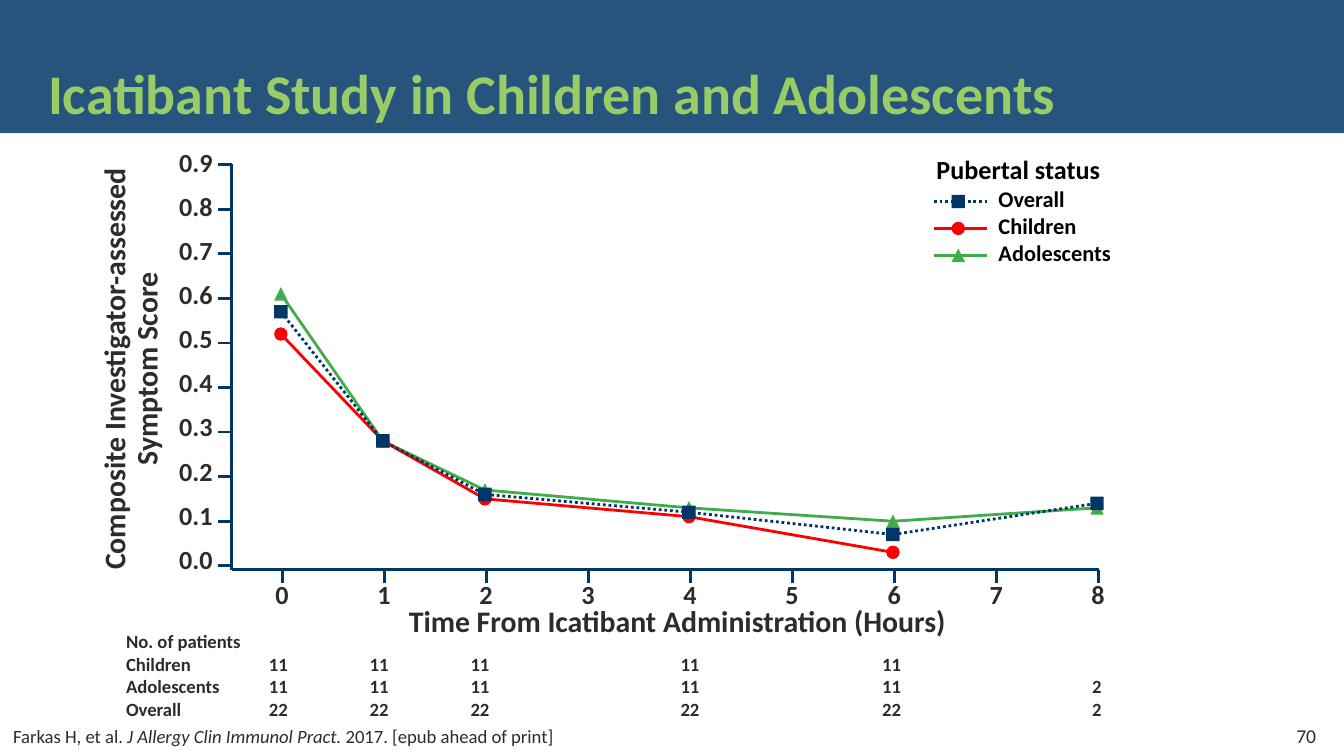
from dataclasses import dataclass

from lxml import etree
from pptx import Presentation
from pptx.dml.color import RGBColor
from pptx.enum import dml, shapes, text
from pptx.oxml import ns
from pptx.util import Pt


@dataclass(frozen=True)
class Theme:
    font: str = "Calibri"
    navy: str = "003767"
    title: str = "99CC67"
    ink: str = "2C2C2C"
    black: str = "000000"
    red: str = "FF0000"
    green: str = "41AD49"
    title_size: float = 30
    axis_title_size: float = 16
    tick_size: float = 14
    legend_size: float = 12
    small_size: float = 10
    number_size: float = 10.5
    line_width: float = 1.5


THEME = Theme()
MARKER = shapes.MSO_SHAPE
ALIGN = text.PP_ALIGN
ANCHOR = text.MSO_ANCHOR

TITLE = "Icatibant Study in Children and Adolescents"
CITATION = [("Farkas H, et al. ", False),
            ("J Allergy Clin Immunol Pract.", True),
            (" 2017. [epub ahead of print]", False)]
SLIDE_NUMBER = "70"
Y_TITLE = ["Composite Investigator-assessed", "Symptom Score"]
X_TITLE = "Time From Icatibant Administration (Hours)"
LEGEND_TITLE = "Pubertal status"
SCORE_TICKS = [tenth / 10 for tenth in range(10)]
HOUR_TICKS = range(9)
HOURS = [0, 1, 2, 4, 6, 8]
# name: (scores at HOURS, colour, marker, dotted line)
SERIES = {
    "Adolescents": ([0.61, 0.28, 0.17, 0.13, 0.1, 0.13], THEME.green, MARKER.ISOSCELES_TRIANGLE, False),
    "Children": ([0.52, 0.28, 0.15, 0.11, 0.03], THEME.red, MARKER.OVAL, False),
    "Overall": ([0.57, 0.28, 0.16, 0.12, 0.07, 0.14], THEME.navy, MARKER.RECTANGLE, True),
}
LEGEND = ["Overall", "Children", "Adolescents"]
PATIENTS = ["No. of patients",
            "Children\t11\t11\t11\t11\t11",
            "Adolescents\t11\t11\t11\t11\t11\t2",
            "Overall\t22\t22\t22\t22\t22\t2"]
PATIENT_TABS = [76.5, 130.5, 184.5, 297, 405, 517.5]

# Plot geometry in points
AXIS_X, AXIS_Y, AXIS_TOP, AXIS_RIGHT = 124.2, 305.3, 88, 588.8
ZERO_HOUR, HOUR_STEP = 151.2, 54.65
ZERO_SCORE, SCORE_STEP = 303.1, 238.7
TICK, MARKER_SIZE, INSET = 7.2, 7.2, 7.2
X_LABELS_LEFT = 108


def hour_x(hour):
    return ZERO_HOUR + HOUR_STEP * hour


def score_y(score):
    return ZERO_SCORE - SCORE_STEP * score


def color(value):
    return RGBColor.from_string(value)


def add_text(slide, box, lines, size, ink=THEME.ink, bold=True, align=ALIGN.LEFT,
             anchor=ANCHOR.TOP, wrap=True, spacing=None, after=None, tabs=(), tab_align="l"):
    """Add a box of paragraphs; a line is a string or a list of (text, italic) runs."""
    shape = slide.shapes.add_textbox(*map(Pt, box))
    frame = shape.text_frame
    frame.word_wrap = wrap
    frame.vertical_anchor = anchor
    for index, line in enumerate(lines):
        paragraph = frame.add_paragraph() if index else frame.paragraphs[0]
        for content, italic in [(line, None)] if isinstance(line, str) else line:
            run = paragraph.add_run()
            run.text = content
            run.font.italic = italic
        paragraph.alignment = align
        if spacing:
            paragraph.line_spacing = spacing
        if after:
            paragraph.space_after = Pt(after)
        if tabs:
            tab_list = etree.SubElement(paragraph._p.get_or_add_pPr(), ns.qn("a:tabLst"))
            for tab in tabs:
                etree.SubElement(tab_list, ns.qn("a:tab"), pos=str(Pt(tab)), algn=tab_align)
        font = paragraph.font
        font.name, font.size, font.bold = THEME.font, Pt(size), bold
        font.color.rgb = color(ink)
    return shape


def style_line(shape, ink, dotted=False):
    shape.line.color.rgb = color(ink)
    shape.line.width = Pt(THEME.line_width)
    if dotted:
        shape.line.dash_style = dml.MSO_LINE.ROUND_DOT


def add_line(slide, x1, y1, x2, y2, ink=THEME.navy, dotted=False):
    line = slide.shapes.add_connector(shapes.MSO_CONNECTOR.STRAIGHT, *map(Pt, (x1, y1, x2, y2)))
    style_line(line, ink, dotted)
    etree.SubElement(line._element.spPr, ns.qn("a:effectLst"))


def add_filled(slide, kind, box, fill):
    shape = slide.shapes.add_shape(kind, *map(Pt, box))
    shape.shadow.inherit = False
    shape.fill.solid()
    shape.fill.fore_color.rgb = color(fill)
    shape.line.fill.background()
    return shape


def add_marker(slide, kind, x, y, fill):
    half = MARKER_SIZE / 2
    add_filled(slide, kind, (x - half, y - half, MARKER_SIZE, MARKER_SIZE), fill)


def add_header(slide):
    band = add_filled(slide, MARKER.RECTANGLE, (0, 0, 720, 71.3), THEME.navy)
    band_color = band._element.spPr.find(".//" + ns.qn("a:srgbClr"))
    etree.SubElement(band_color, ns.qn("a:alpha"), val="85000")
    title = add_text(slide, (18.7, 18, 643.7, 53.3), [TITLE], THEME.title_size,
                     THEME.title, anchor=ANCHOR.BOTTOM, spacing=0.9)
    properties = title.text_frame.paragraphs[0].runs[0].font._element
    effects = etree.SubElement(properties, ns.qn("a:effectLst"))
    shadow = etree.SubElement(effects, ns.qn("a:outerShdw"), blurRad=str(Pt(3)),
                              dist=str(Pt(3)), dir="2700000", algn="tl")
    shade = etree.SubElement(shadow, ns.qn("a:srgbClr"), val=THEME.black)
    etree.SubElement(shade, ns.qn("a:alpha"), val="43000")


def add_axes(slide):
    add_line(slide, AXIS_X, AXIS_TOP, AXIS_X, AXIS_Y)
    add_line(slide, AXIS_X, AXIS_Y, AXIS_RIGHT, AXIS_Y)
    for score in SCORE_TICKS:
        add_line(slide, AXIS_X - TICK, score_y(score), AXIS_X, score_y(score))
    for hour in HOUR_TICKS:
        add_line(slide, hour_x(hour), AXIS_Y, hour_x(hour), AXIS_Y + TICK)
    y_title = add_text(slide, (-46.1, 176.4, 232.6, 42.5), Y_TITLE, THEME.axis_title_size,
                       align=ALIGN.CENTER, anchor=ANCHOR.BOTTOM, wrap=False, spacing=0.9)
    y_title.rotation = 270
    add_text(slide, (88.6, 74.9, 32.4, 249.8), [f"{score:.1f}" for score in reversed(SCORE_TICKS)],
             THEME.tick_size, align=ALIGN.RIGHT, wrap=False, after=6.8)
    label_tabs = [hour_x(hour) - X_LABELS_LEFT - INSET for hour in HOUR_TICKS]
    labels = "".join(f"\t{hour}" for hour in HOUR_TICKS)
    add_text(slide, (X_LABELS_LEFT, 309.6, 509.8, 20), [labels], THEME.tick_size,
             spacing=0.8, tabs=label_tabs, tab_align="ctr")
    add_text(slide, (X_LABELS_LEFT, 323.2, 509.8, 24), [X_TITLE], THEME.axis_title_size,
             align=ALIGN.CENTER, spacing=0.8)


def add_series(slide, scores, ink, marker, dotted):
    points = [(hour_x(hour) - 0.7, score_y(score)) for hour, score in zip(HOURS, scores)]
    start, *others = [(Pt(x), Pt(y)) for x, y in points]
    builder = slide.shapes.build_freeform(*start)
    builder.add_line_segments(others, close=False)
    curve = builder.convert_to_shape()
    curve.shadow.inherit = False
    curve.fill.background()
    style_line(curve, ink, dotted)
    for x, y in points:
        add_marker(slide, marker, x, y, ink)


def add_legend(slide):
    left, width, top, pitch = 500.4, 28.1, 108, 14.4
    add_text(slide, (494.6, 78.5, 103, 24.5), [LEGEND_TITLE], THEME.tick_size, THEME.black, wrap=False)
    add_text(slide, (527.8, 95.8, 75.6, 51.1), LEGEND, THEME.legend_size, THEME.black, wrap=False)
    for row, name in enumerate(LEGEND):
        _, ink, marker, dotted = SERIES[name]
        y = top + row * pitch
        add_line(slide, left, y, left + width, y, ink, dotted)
        add_marker(slide, marker, left + 13, y, ink)


def main():
    presentation = Presentation()
    presentation.slide_width, presentation.slide_height = Pt(720), Pt(405)
    slide = presentation.slides.add_slide(presentation.slide_layouts[6])
    add_header(slide)
    add_axes(slide)
    for series in SERIES.values():
        add_series(slide, *series)
    add_legend(slide)
    add_text(slide, (60.5, 334.1, 554.4, 55.4), PATIENTS, THEME.small_size, tabs=PATIENT_TABS)
    add_text(slide, (0, 384.5, 305.3, 19.4), [CITATION], THEME.small_size,
             bold=False, anchor=ANCHOR.BOTTOM)
    add_text(slide, (679, 383.8, 33.1, 21.2), [SLIDE_NUMBER], THEME.number_size,
             bold=False, align=ALIGN.RIGHT, anchor=ANCHOR.MIDDLE)
    presentation.save("out.pptx")


if __name__ == "__main__":
    main()
